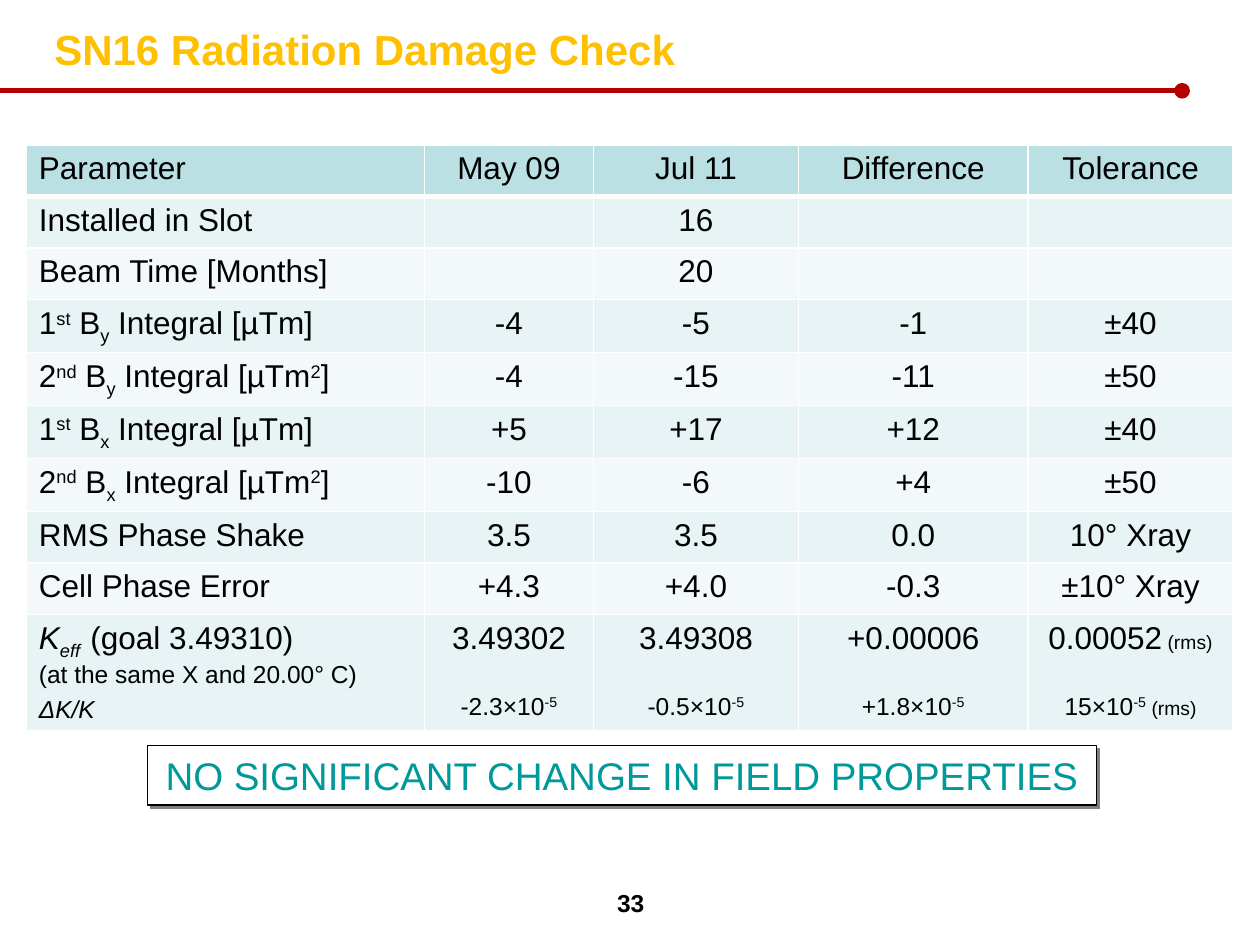
"""Build the SN16 radiation damage check slide."""
from typing import NamedTuple

from lxml.etree import SubElement
from pptx import Presentation
from pptx.dml.color import RGBColor as RGB
from pptx.enum.shapes import MSO_CONNECTOR as CONN, MSO_SHAPE as SHAPE
from pptx.enum.text import MSO_ANCHOR as ANCHOR, MSO_AUTO_SIZE as AUTO, PP_ALIGN as ALIGN
from pptx.oxml.ns import qn
from pptx.util import Cm, Pt

COLORS = {
    "title": "FFC000", "rule": "B40000", "text": "000000", "white": "FFFFFF",
    "header": "BBE0E3", "band_dark": "E7F3F4", "band_light": "F3F9FA",
    "verdict": "009999", "shadow": "808080",
}


class Run(NamedTuple):
    text: str
    size: float = 18
    base: int = 0
    italic: bool = False


class Para(NamedTuple):
    runs: list[Run]
    before: float = 0


def color(name: str) -> RGB:
    return RGB.from_string(COLORS[name])


def write(tf, text, *, size=18, fill="text", bold=False, align=ALIGN.LEFT, spacing=None):
    paras = [Para([Run(text, size)])] if isinstance(text, str) else text
    for i, para in enumerate(paras):
        p = tf.paragraphs[0] if i == 0 else tf.add_paragraph()
        p.alignment = align
        p.space_before = Pt(para.before)
        if spacing:
            p.line_spacing = spacing
        for run in para.runs:
            if run.text == "\n":
                p.add_line_break()
                continue
            r = p.add_run()
            r.text = run.text
            f = r.font
            f.name, f.size = "Arial", Pt(run.size)
            f.bold, f.italic = bold, run.italic
            f.color.rgb = color(fill)
            if run.base:
                f._element.set("baseline", str(run.base * 1000))


def integral(order: str, suffix: str, axis: str, power: str = "") -> list[Para]:
    runs = [Run(order), Run(suffix, base=30), Run(" B"), Run(axis, base=-25),
            Run(" Integral [µTm")]
    if power:
        runs.append(Run(power, base=30))
    return [Para(runs + [Run("]")])]


def k_value(value: str, relative: str, note: str = "") -> list[Para]:
    top, bottom = [Run(value)], [Run(relative, 14), Run("-5", 14, 30)]
    if note:
        top.append(Run(f" {note}", 11))
        bottom.append(Run(f" {note}", 11))
    return [Para(top), Para(bottom, 21)]


K_LABEL = [
    Para([Run("K", italic=True), Run("eff  ", base=-25, italic=True),
          Run("(goal 3.49310)"), Run("\n"), Run("(at the same X and 20.00° C)", 14)]),
    Para([Run("ΔK/K", 14, italic=True)], 4.6),
]
ROWS = [
    ["Parameter", "May 09", "Jul 11", "Difference", "Tolerance"],
    ["Installed in Slot", "", "16", "", ""],
    ["Beam Time [Months]", "", "20", "", ""],
    [integral("1", "st", "y"), "-4", "-5", "-1", "±40"],
    [integral("2", "nd", "y", "2"), "-4", "-15", "-11", "±50"],
    [integral("1", "st", "x"), "+5", "+17", "+12", "±40"],
    [integral("2", "nd", "x", "2"), "-10", "-6", "+4", "±50"],
    ["RMS Phase Shake", "3.5", "3.5", "0.0", "10° Xray"],
    ["Cell Phase Error", "+4.3", "+4.0", "-0.3", "±10° Xray"],
    [K_LABEL, k_value("3.49302", "-2.3×10"), k_value("3.49308", "-0.5×10"),
     k_value("+0.00006", "+1.8×10"), k_value("0.00052", "15×10", "(rms)")],
]
COL_WIDTHS = [8.03, 3.4, 4.14, 4.62, 4.14]
ROW_HEIGHT = 1.04


def add_borders(cell, bottom: float) -> None:
    tc_pr = cell._tc.get_or_add_tcPr()
    for side, width in (("L", 1), ("R", 1), ("T", 1), ("B", bottom)):
        ln = SubElement(tc_pr, qn(f"a:ln{side}"), w=str(Pt(width)))
        fill = SubElement(ln, qn("a:solidFill"))
        SubElement(fill, qn("a:srgbClr"), val=COLORS["white"])


def add_results(s) -> None:
    table = s.shapes.add_table(len(ROWS), len(COL_WIDTHS), Cm(0.53), Cm(2.92),
                               Cm(sum(COL_WIDTHS)), Cm(ROW_HEIGHT * len(ROWS))).table
    for column, width in zip(table.columns, COL_WIDTHS):
        column.width = Cm(width)
    for i, row in enumerate(ROWS):
        table.rows[i].height = Cm(ROW_HEIGHT)
        band = "header" if i == 0 else "band_dark" if i % 2 else "band_light"
        for j, content in enumerate(row):
            cell = table.cell(i, j)
            add_borders(cell, bottom=1 if i else 3)
            cell.fill.solid()
            cell.fill.fore_color.rgb = color(band)
            if content:
                write(cell.text_frame, content, align=ALIGN.CENTER if j else ALIGN.LEFT)


def add_rule(s) -> None:
    rule = s.shapes.add_connector(CONN.STRAIGHT, 0, Cm(1.83), Cm(23.83), Cm(1.83))
    rule.line.color.rgb = color("rule")
    rule.line.width = Pt(3)
    SubElement(rule.line._get_or_add_ln(), qn("a:tailEnd"), type="oval")
    SubElement(rule._element.spPr, qn("a:effectLst"))


def add_title(s) -> None:
    title = s.shapes.title
    title.left, title.top, title.width, title.height = Cm(0.84), Cm(0.2), Cm(23.93), Cm(1.47)
    tf = title.text_frame
    tf.auto_size = AUTO.NONE
    tf.vertical_anchor = ANCHOR.MIDDLE
    write(tf, "SN16 Radiation Damage Check", size=24, fill="title", bold=True, spacing=1.1)


def add_verdict(s) -> None:
    sp = s.shapes.add_shape(SHAPE.RECTANGLE, Cm(2.97), Cm(15.03), Cm(19.13), Cm(1.2))
    sp.fill.solid()
    sp.fill.fore_color.rgb = color("white")
    sp.line.color.rgb = color("text")
    sp.line.width = Pt(0.75)
    sp.shadow.inherit = False
    effects = sp._element.spPr.find(qn("a:effectLst"))
    shadow = SubElement(effects, qn("a:outerShdw"), dist=str(Pt(2.8)), dir="2700000",
                        algn="ctr", rotWithShape="0")
    SubElement(shadow, qn("a:srgbClr"), val=COLORS["shadow"])
    tf = sp.text_frame
    tf.word_wrap = False
    tf.auto_size = AUTO.SHAPE_TO_FIT_TEXT
    tf.vertical_anchor = ANCHOR.TOP
    write(tf, "NO SIGNIFICANT CHANGE IN FIELD PROPERTIES", size=22, fill="verdict",
          align=ALIGN.CENTER)


def add_page_number(s) -> None:
    tf = s.shapes.add_textbox(Cm(8.69), Cm(17.78), Cm(8.05), Cm(0.89)).text_frame
    tf.word_wrap = True
    write(tf, "33", size=14, bold=True, align=ALIGN.CENTER)


def main() -> None:
    prs = Presentation()
    prs.slide_width, prs.slide_height = Cm(25.4), Cm(19.05)
    s = prs.slides.add_slide(prs.slide_layouts[5])
    add_rule(s)
    add_title(s)
    add_results(s)
    add_verdict(s)
    add_page_number(s)
    prs.save("out.pptx")


if __name__ == "__main__":
    main()
